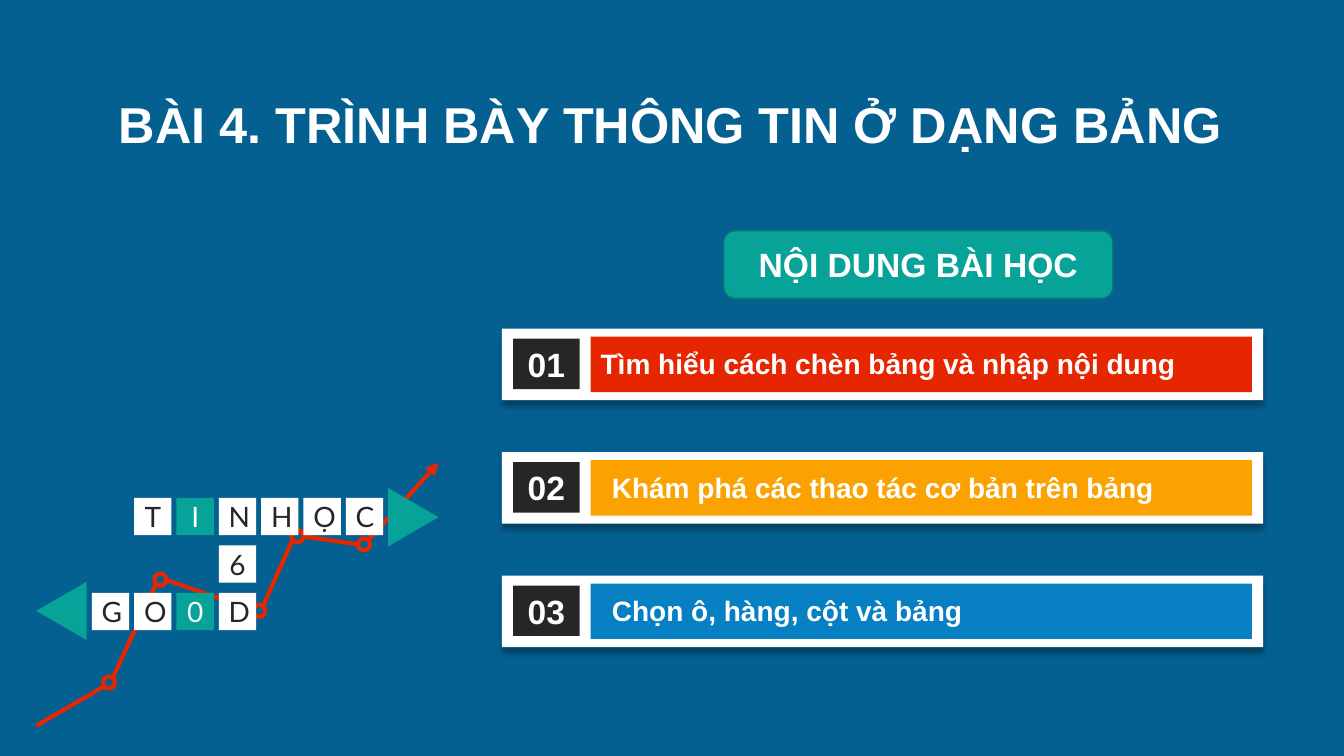
from lxml import etree
from pptx import Presentation
from pptx import util as u
from pptx.dml.color import RGBColor
from pptx.enum import shapes, text
from pptx.oxml import parse_xml
from pptx.oxml.ns import nsdecls, qn

WIDTH, HEIGHT = u.Inches(13.33), u.Inches(7.5)

COLORS = {
    "background": "056092", "white": "FFFFFF", "dark": "262626",
    "teal": "07A398", "teal_edge": "057970",
    "red": "E62601", "orange": "FBA200", "blue": "0680C3",
}

# All lengths below are percentages of the slide's width or height.
TOPICS = [  # label, bar colour, left edge of the label
    ("Tìm hiểu cách chèn bảng và nhập nội dung", "red", 43.95),
    ("Khám phá các thao tác cơ bản trên bảng", "orange", 44.78),
    ("Chọn ô, hàng, cột và bảng", "blue", 44.78),
]
CARD_TOP, CARD_PITCH = 43.47, 16.33

TILE_ROWS = [(1, "TINHỌC"), (2, "6"), (0, "GO0D")]  # first column, letters
TEAL_COLUMN = 2
TILE_LEFT, TILE_TOP = 6.83, 65.87
TILE_PITCH_X, TILE_PITCH_Y = 3.15, 6.27

TREND_DOTS = [(8.1, 90.27), (11.93, 76.67), (19.28, 80.8),
              (22.13, 70.93), (27.08, 72)]
DOT_WIDTH, DOT_HEIGHT = 0.9, 1.6
TREND_LINES = [
    ((7.73, 90.8), (2.7, 96)),
    ((11.63, 77.2), (8.4, 89.6)),
    ((18.83, 80.67), (12.3, 76.67)),
    ((21.75, 71.47), (19.58, 80.13)),
    ((22.5, 70.93), (26.63, 72)),
    ((27.38, 71.47), (32.63, 61.2)),
]


def color(name):
    return RGBColor.from_string(COLORS[name])


def across(share):
    return round(WIDTH * share / 100)


def down(share):
    return round(HEIGHT * share / 100)


def frame(left, top, width, height):
    return across(left), down(top), across(width), down(height)


def write(shape, words, size, ink="white", font="Arial", bold=True,
          align=text.PP_ALIGN.CENTER, anchor=text.MSO_ANCHOR.MIDDLE):
    text_frame = shape.text_frame
    text_frame.text = words
    text_frame.word_wrap = True
    text_frame.vertical_anchor = anchor
    paragraph = text_frame.paragraphs[0]
    paragraph.alignment = align
    run_font = paragraph.runs[0].font
    run_font.name, run_font.size, run_font.bold = font, u.Pt(size), bold
    run_font.color.rgb = color(ink)


def add_block(slide, kind, box, fill=None, line=None, line_width=1):
    shape = slide.shapes.add_shape(kind, *frame(*box))
    shape.shadow.inherit = False
    if fill:
        shape.fill.solid()
        shape.fill.fore_color.rgb = color(fill)
    else:
        shape.fill.background()
    if line:
        shape.line.color.rgb = color(line)
        shape.line.width = u.Pt(line_width)
    else:
        shape.line.fill.background()
    return shape


def add_drop_shadow(shape):
    effects = shape._element.spPr.find(qn("a:effectLst"))
    effects.append(parse_xml(
        f'<a:outerShdw {nsdecls("a")} blurRad="{u.Pt(4)}" dist="{u.Pt(4)}" '
        'dir="5400000" algn="t" rotWithShape="0"><a:srgbClr val="000000">'
        '<a:alpha val="30000"/></a:srgbClr></a:outerShdw>'))


def add_trend_line(slide, start, end, arrow=False):
    connector = slide.shapes.add_connector(
        shapes.MSO_CONNECTOR.STRAIGHT, across(start[0]), down(start[1]),
        across(end[0]), down(end[1]))
    connector.line.color.rgb = color("red")
    connector.line.width = u.Pt(3)
    if arrow:
        etree.SubElement(connector.line._get_or_add_ln(),
                         qn("a:tailEnd"), type="triangle")
    etree.SubElement(connector._element.spPr, qn("a:effectLst"))


def add_trend(slide):
    for x, y in TREND_DOTS:
        box = (x - DOT_WIDTH / 2, y - DOT_HEIGHT / 2, DOT_WIDTH, DOT_HEIGHT)
        add_block(slide, shapes.MSO_SHAPE.OVAL, box, line="red", line_width=3)
    for start, end in TREND_LINES:
        add_trend_line(slide, start, end, arrow=(start, end) == TREND_LINES[-1])


def add_tiles(slide):
    for row, (first, letters) in enumerate(TILE_ROWS):
        for column, letter in enumerate(letters, start=first + (len(letters) == 1)):
            teal = column == TEAL_COLUMN
            box = (TILE_LEFT + column * TILE_PITCH_X,
                   TILE_TOP + row * TILE_PITCH_Y, 2.78, 4.93)
            tile = add_block(slide, shapes.MSO_SHAPE.RECTANGLE, box,
                             "teal" if teal else "white")
            write(tile, letter, 20, "white" if teal else "dark", "Lato", False)
    for left, top, angle in [(28.58, 65.07, 90), (2.4, 77.47, 270)]:
        pointer = add_block(slide, shapes.MSO_SHAPE.ISOSCELES_TRIANGLE,
                            (left, top, 4.35, 6.67), "teal")
        pointer.rotation = angle


def add_topic(slide, index, label, bar_color, label_left):
    top = CARD_TOP + index * CARD_PITCH
    rectangle = shapes.MSO_SHAPE.RECTANGLE
    card = add_block(slide, rectangle, (37.35, top, 56.63, 9.47), "white")
    add_drop_shadow(card)
    add_block(slide, rectangle, (43.95, top + 1.07, 49.2, 7.33), bar_color)
    badge = add_block(slide, rectangle, (38.18, top + 1.33, 4.95, 6.67), "dark")
    write(badge, f"{index + 1:02d}", 24)
    caption = slide.shapes.add_textbox(*frame(label_left, top + 1.73, 47.1, 5.87))
    write(caption, label, 20, align=text.PP_ALIGN.LEFT,
          anchor=text.MSO_ANCHOR.TOP)


def main():
    presentation = Presentation()
    presentation.slide_width, presentation.slide_height = WIDTH, HEIGHT
    slide = presentation.slides.add_slide(presentation.slide_layouts[5])
    slide.background.fill.solid()
    slide.background.fill.fore_color.rgb = color("background")

    # Title
    title = slide.shapes.title
    title.left, title.top, title.width, title.height = frame(8.1, 11.6, 87.53, 9.47)
    write(title, "BÀI 4. TRÌNH BÀY THÔNG TIN Ở DẠNG BẢNG", 36,
          align=text.PP_ALIGN.LEFT)

    # Trend line with the letter tiles in front
    add_trend(slide)
    add_tiles(slide)

    # Lesson contents
    for index, topic in enumerate(TOPICS):
        add_topic(slide, index, *topic)
    heading = add_block(slide, shapes.MSO_SHAPE.ROUNDED_RECTANGLE,
                        (53.85, 30.53, 28.95, 8.93), "teal", "teal_edge")
    write(heading, "NỘI DUNG BÀI HỌC", 24)

    presentation.save("out.pptx")


if __name__ == "__main__":
    main()
